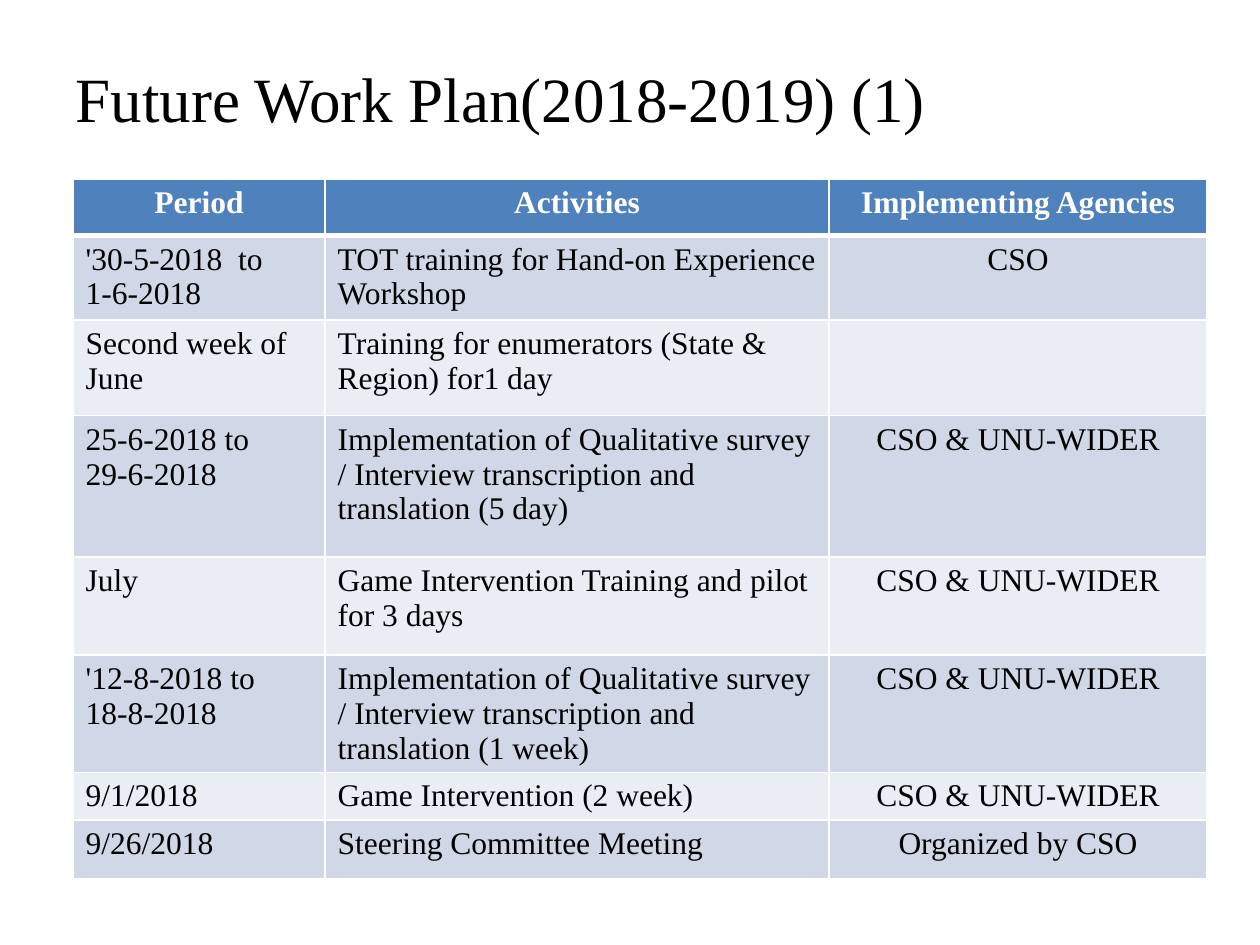
from typing import NamedTuple

from lxml import etree
from pptx import Presentation
from pptx.dml.color import RGBColor
from pptx.enum import text
from pptx.oxml import ns
from pptx.util import Inches, Pt

FONT = "Times New Roman"
COLORS = {
    "header": "4F81BD",
    "odd": "D0D8E8",
    "even": "E9EDF4",
    "border": "FFFFFF",
    "light": "FFFFFF",
    "dark": "000000",
}
HEADINGS = ("Period", "Activities", "Implementing Agencies")
COLUMN_WIDTHS = (2, 4, 3)
HEADER_HEIGHT = 0.45
LEFT, CENTER = text.PP_ALIGN.LEFT, text.PP_ALIGN.CENTER
PARTNERS = "CSO & UNU-WIDER"
SURVEY = "Implementation of Qualitative survey / Interview transcription and translation"


class Task(NamedTuple):
    period: str
    activity: str
    agencies: str
    height: float


TASKS = (
    Task("'30-5-2018  to\n1-6-2018", "TOT training for Hand-on Experience Workshop", "CSO", 0.67),
    Task("Second week of June", "Training for enumerators (State & Region) for1 day", "", 0.76),
    Task("25-6-2018 to\n29-6-2018", f"{SURVEY} (5 day)", PARTNERS, 1.12),
    Task("July", "Game Intervention Training and pilot for 3 days", PARTNERS, 0.78),
    Task("'12-8-2018 to  18-8-2018", f"{SURVEY} (1 week)", PARTNERS, 0.78),
    Task("9/1/2018", "Game Intervention (2 week)", PARTNERS, 0.35),
    Task("9/26/2018", "Steering Committee Meeting", "Organized by CSO", 0.47),
)


def write_text(frame, content: str, *, size: float = 18, color: str = "dark",
               bold: bool = False, align=LEFT) -> None:
    """Fill a text frame, one paragraph for each line of content."""
    frame.text = content
    for paragraph in frame.paragraphs:
        paragraph.alignment = align
        for item in (paragraph, *paragraph.runs):
            item.font.name = FONT
            item.font.size = Pt(size)
            item.font.bold = bold
            item.font.color.rgb = RGBColor.from_string(COLORS[color])


def set_borders(cell, bottom: float = 1) -> None:
    properties = cell._tc.get_or_add_tcPr()
    widths = {"a:lnL": 1, "a:lnR": 1, "a:lnT": 1, "a:lnB": bottom}
    for index, (tag, width) in enumerate(widths.items()):
        line = etree.Element(ns.qn(tag), w=str(Pt(width)))
        fill = etree.SubElement(line, ns.qn("a:solidFill"))
        etree.SubElement(fill, ns.qn("a:srgbClr"), val=COLORS["border"])
        properties.insert(index, line)


def format_cell(cell, fill: str, bottom: float = 1) -> None:
    cell.fill.solid()
    cell.fill.fore_color.rgb = RGBColor.from_string(COLORS[fill])
    set_borders(cell, bottom)


def add_title(slide) -> None:
    title = slide.shapes.title
    title.left, title.top = Inches(0.5), Inches(0.3)
    title.width, title.height = Inches(9), Inches(0.95)
    title.text_frame.vertical_anchor = text.MSO_ANCHOR.MIDDLE
    write_text(title.text_frame, "Future Work Plan(2018-2019) (1)", size=36)


def add_work_plan(slide, tasks: tuple[Task, ...]) -> None:
    heights = (HEADER_HEIGHT, *(task.height for task in tasks))
    table = slide.shapes.add_table(
        len(heights), len(HEADINGS), Inches(0.58), Inches(1.42),
        Inches(sum(COLUMN_WIDTHS)), Inches(sum(heights))).table
    for column, width in zip(table.columns, COLUMN_WIDTHS):
        column.width = Inches(width)
    for row, height in zip(table.rows, heights):
        row.height = Inches(height)

    for cell, heading in zip(table.rows[0].cells, HEADINGS):
        write_text(cell.text_frame, heading, color="light", bold=True, align=CENTER)
        format_cell(cell, "header", bottom=3)

    for number, task in enumerate(tasks, start=1):
        contents = (task.period, task.activity, task.agencies)
        for cell, content, align in zip(table.rows[number].cells, contents, (LEFT, LEFT, CENTER)):
            write_text(cell.text_frame, content, align=align)
            format_cell(cell, "odd" if number % 2 else "even", bottom=1)
    for cell in table.rows[1].cells:
        cell._tc.tcPr.find(ns.qn("a:lnT")).set("w", str(Pt(3)))


def main() -> None:
    presentation = Presentation()
    presentation.slide_width, presentation.slide_height = Inches(10), Inches(7.5)
    slide = presentation.slides.add_slide(presentation.slide_layouts[5])
    add_title(slide)
    add_work_plan(slide, TASKS)
    presentation.save("out.pptx")


if __name__ == "__main__":
    main()
